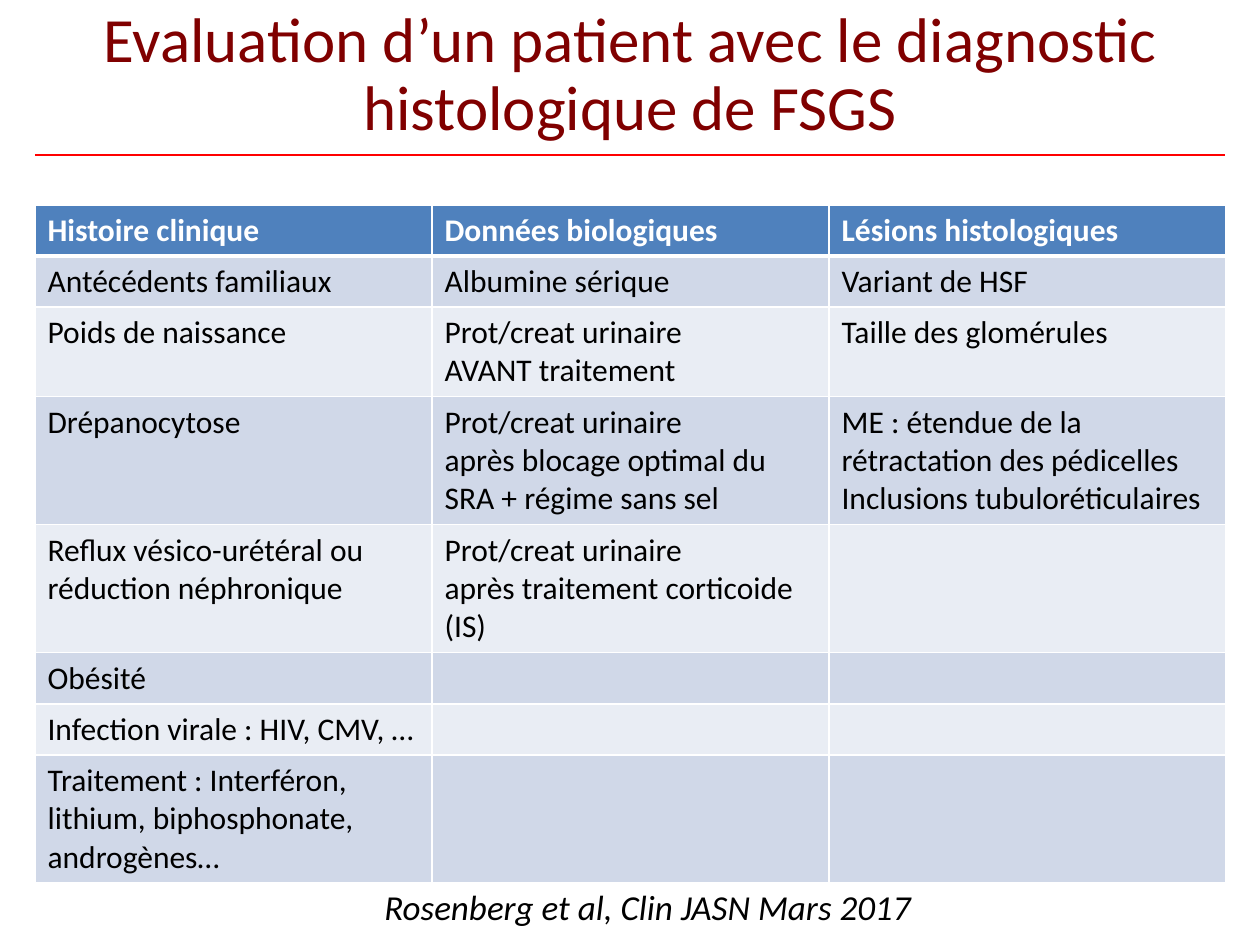
from lxml.etree import SubElement
from pptx import Presentation
from pptx.dml.color import RGBColor
from pptx.enum.shapes import MSO_CONNECTOR as Connector
from pptx.enum.text import MSO_ANCHOR as Anchor, PP_ALIGN as Align
from pptx.oxml.ns import qn
from pptx.util import Emu, Pt

TITLE = "Evaluation d’un patient avec le diagnostic histologique de FSGS"
HEADINGS = ["Histoire clinique", "Données biologiques", "Lésions histologiques"]
FINDINGS = [
    ["Antécédents familiaux", "Albumine sérique", "Variant de HSF"],
    ["Poids de naissance", "Prot/creat urinaire\nAVANT traitement", "Taille des glomérules"],
    ["Drépanocytose",
     "Prot/creat urinaire\naprès blocage optimal du SRA + régime sans sel",
     "ME : étendue de la rétractation des pédicelles\nInclusions tubuloréticulaires"],
    ["Reflux vésico-urétéral ou réduction néphronique",
     "Prot/creat urinaire\naprès traitement corticoide (IS)", ""],
    ["Obésité", "", ""],
    ["Infection virale : HIV, CMV, …", "", ""],
    ["Traitement : Interféron, lithium, biphosphonate, androgènes…", "", ""],
]
CITATION = "Rosenberg et al, Clin JASN Mars 2017"

FONT = "Calibri"
WHITE, BLACK, MAROON, RED = "FFFFFF", "000000", "800000", "FF0000"
HEADER_FILL, BANDS = "4F81BD", ("D0D8E8", "E9EDF4")
LEFT, RIGHT = 35, 1225
COLUMN_WIDTH, ROW_HEIGHT = 397, 51


def px(*lengths):
    return [Emu(round(n * 914400 / 126)) for n in lengths]


def rgb(value):
    return RGBColor.from_string(value)


def style(frame, size, color, bold=False, italic=False):
    for paragraph in frame.paragraphs:
        for run in paragraph.runs:
            font = run.font
            font.name, font.size = FONT, Pt(size)
            font.bold, font.italic = bold, italic
            font.color.rgb = rgb(color)


def add_border(cell, side, width):
    line = SubElement(cell._tc.get_or_add_tcPr(), qn("a:ln" + side), w=str(Pt(width)))
    fill = SubElement(line, qn("a:solidFill"))
    SubElement(fill, qn("a:srgbClr"), val=WHITE)


prs = Presentation()
prs.slide_width, prs.slide_height = px(1260, 945)
slide = prs.slides.add_slide(prs.slide_layouts[5])

# Title
title = slide.shapes.title
title.left, title.top, title.width, title.height = px(63, -2, 1134, 157)
title.text_frame.text = TITLE
title.text_frame.vertical_anchor = Anchor.MIDDLE
title.text_frame.paragraphs[0].alignment = Align.CENTER
title.text_frame.paragraphs[0].line_spacing = 0.9
style(title.text_frame, 36, MAROON)

# Rule under the title
rule = slide.shapes.add_connector(Connector.STRAIGHT, *px(LEFT, 155, RIGHT, 155))
rule.line.color.rgb = rgb(RED)
rule.line.width = Pt(1.5)
SubElement(rule._element.spPr, qn("a:effectLst"))

# Table of findings
rows = [HEADINGS] + FINDINGS
frame = slide.shapes.add_table(
    len(rows), len(HEADINGS),
    *px(LEFT, 205, COLUMN_WIDTH * len(HEADINGS), ROW_HEIGHT * len(rows)))
table = frame.table
for column in table.columns:
    column.width = px(COLUMN_WIDTH)[0]
for r, row in enumerate(rows):
    table.rows[r].height = px(ROW_HEIGHT)[0]
    is_header = r == 0
    for c, text in enumerate(row):
        cell = table.cell(r, c)
        cell.text_frame.text = text
        style(cell.text_frame, 18, WHITE if is_header else BLACK, bold=is_header)
        for side in "LRTB":
            thick = (is_header and side == "B") or (r == 1 and side == "T")
            add_border(cell, side, 3 if thick else 1)
        cell.fill.solid()
        cell.fill.fore_color.rgb = rgb(HEADER_FILL if is_header else BANDS[(r - 1) % 2])

# Citation
citation = slide.shapes.add_textbox(*px(372, 879, 556, 55))
citation.text_frame.text = CITATION
citation.text_frame.word_wrap = False
style(citation.text_frame, 20, BLACK, italic=True)

prs.save("out.pptx")
